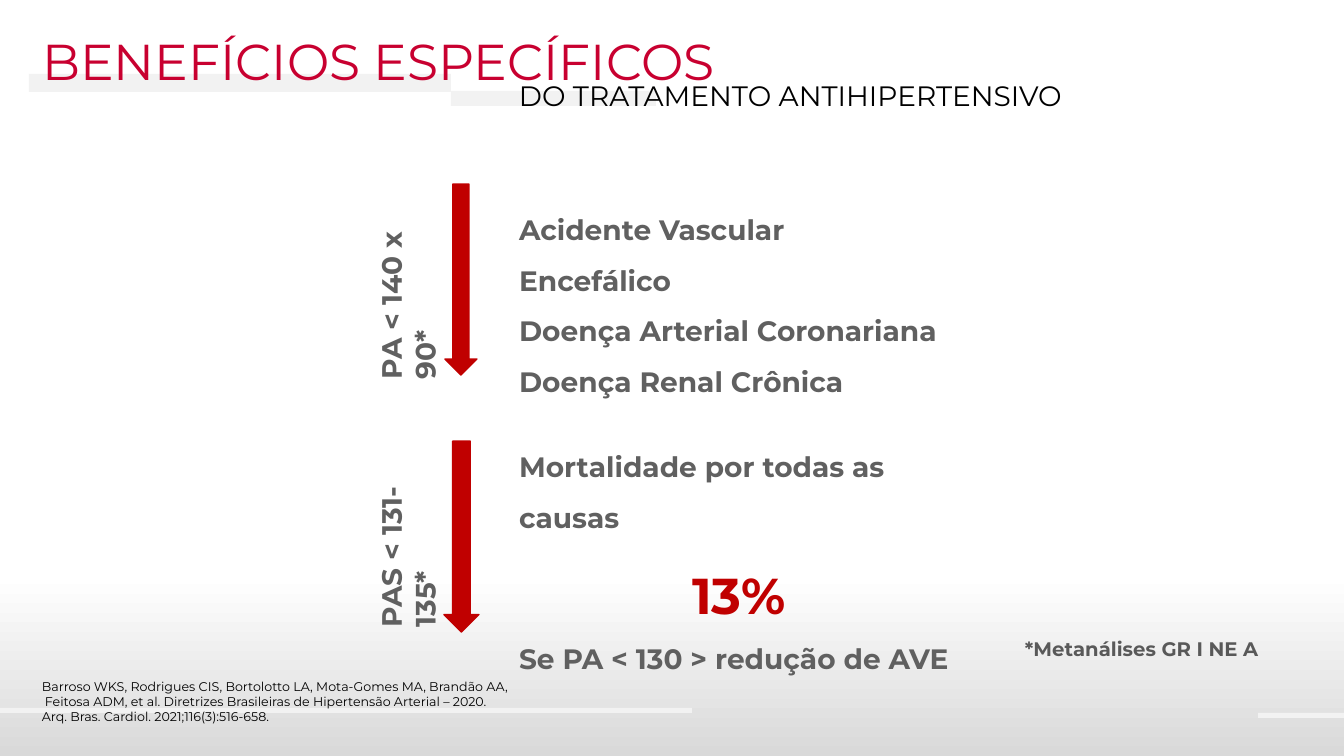
"""Build the slide on the specific benefits of antihypertensive treatment."""
from lxml.etree import SubElement
from pptx import Presentation
from pptx.dml.color import RGBColor
from pptx.enum.shapes import MSO_SHAPE as SHAPE
from pptx.enum.text import MSO_ANCHOR, MSO_AUTO_SIZE, PP_ALIGN
from pptx.oxml.ns import qn
from pptx.util import Emu, Pt

PX = 914400 / 100.8
W, H = 1344, 756

THEME = {
    "font": "Montserrat",
    "bar": "F2F2F2",
    "arrow": "C00000",
    "panel": [(0.76, "FFFFFF"), (1, "D9D9D9")],
    "styles": {
        "title": {"size": 36, "color": "C80030", "bold": False},
        "subtitle": {"size": 20, "color": "000000", "bold": False},
        "item": {"size": 20, "color": "606060", "bold": True},
        "figure": {"size": 36, "color": "C00000", "bold": True},
        "note": {"size": 14, "color": "595959", "bold": True},
        "source": {"size": 9, "color": "000000", "bold": False},
    },
}

BARS = [(29, 74, 422, 18), (451, 91, 205, 15), (0, 708, 692, 5), (1258, 713, 86, 5)]
ARROWS = [(445, 184, 32, 191), (444, 441, 35, 191)]

PLACEHOLDERS = {
    0: {"box": (32, 25, 1048, 72), "spacing": 1,
        "lines": [("BENEFÍCIOS ESPECÍFICOS", "title", 0)]},
    1: {"box": (509, 191, 440, 162), "spacing": 1.5,
        "lines": [("Acidente Vascular Encefálico", "item", 0),
                  ("Doença Arterial Coronariana", "item", 0),
                  ("Doença Renal Crônica", "item", 0)]},
    2: {"box": (509, 428, 487, 204), "spacing": 1.5,
        "lines": [("Mortalidade por todas as causas", "item", 0),
                  ("13%", "figure", 173),
                  ("Se PA < 130 > redução de AVE", "item", 0)]},
}

TEXTS = [
    {"box": (509, 74, 729, 44),
     "lines": [("DO TRATAMENTO ANTIHIPERTENSIVO", "subtitle", 0)]},
    {"box": (281, 257, 220, 44), "rotation": 270,
     "lines": [("PA < 140 x 90*", "item", 0)]},
    {"box": (285, 509, 212, 44), "rotation": 270,
     "lines": [("PAS < 131-135*", "item", 0)]},
    {"box": (1015, 632, 266, 34),
     "lines": [("*Metanálises GR I NE A", "note", 0)]},
    {"box": (32, 674, 674, 56),
     "lines": [("Barroso WKS, Rodrigues CIS, Bortolotto LA, Mota-Gomes MA, Brandão AA,", "source", 0),
               ("Feitosa ADM, et al. Diretrizes Brasileiras de Hipertensão Arterial – 2020.", "source", 3),
               ("Arq. Bras. Cardiol. 2021;116(3):516-658.", "source", 0)]},
]


def px(n):
    return Emu(round(n * PX))


def rgb(color):
    return RGBColor.from_string(color)


def set_all(obj, values):
    for name, value in values.items():
        setattr(obj, name, value)


def place(sp, box):
    set_all(sp, dict(zip(("left", "top", "width", "height"), map(px, box))))


def add_shape(s, kind, box, color=None, outlined=False):
    sp = s.shapes.add_shape(kind, *map(px, box))
    sp.shadow.inherit = False
    if color:
        sp.fill.solid()
        sp.fill.fore_color.rgb = rgb(color)
    if outlined:
        sp.line.color.rgb = rgb(color)
        sp.line.width = Pt(1)
    else:
        sp.line.fill.background()
    return sp


def add_panel(s):
    fill = add_shape(s, SHAPE.RECTANGLE, (0, 0, W, H)).fill
    fill.gradient()
    fill.gradient_angle = 270
    for stop, (position, color) in zip(fill.gradient_stops, THEME["panel"]):
        stop.position = position
        stop.color.rgb = rgb(color)


def write(sp, lines, spacing=1):
    tf = sp.text_frame
    set_all(tf, {"word_wrap": True, "auto_size": MSO_AUTO_SIZE.NONE,
                 "vertical_anchor": MSO_ANCHOR.TOP})
    for i, (text, style, indent) in enumerate(lines):
        p = tf.add_paragraph() if i else tf.paragraphs[0]
        set_all(p, {"alignment": PP_ALIGN.LEFT, "line_spacing": spacing,
                    "space_before": Pt(0)})
        pPr = p._p.get_or_add_pPr()
        pPr.set("marL", str(px(indent)))
        pPr.set("indent", "0")
        SubElement(pPr, qn("a:buNone"))
        r = p.add_run()
        r.text = text
        look = THEME["styles"][style]
        set_all(r.font, {"name": THEME["font"], "size": Pt(look["size"]),
                         "bold": look["bold"]})
        r.font.color.rgb = rgb(look["color"])


def main():
    prs = Presentation()
    prs.slide_width, prs.slide_height = px(W), px(H)
    s = prs.slides.add_slide(prs.slide_layouts[3])
    add_panel(s)
    for box in BARS:
        add_shape(s, SHAPE.RECTANGLE, box, THEME["bar"])
    for idx, part in PLACEHOLDERS.items():
        sp = s.placeholders[idx]
        place(sp, part["box"])
        write(sp, part["lines"], part["spacing"])
        s.shapes._spTree.append(sp._element)
    for box in ARROWS:
        add_shape(s, SHAPE.DOWN_ARROW, box, THEME["arrow"], outlined=True)
    for part in TEXTS:
        sp = s.shapes.add_textbox(*map(px, part["box"]))
        sp.rotation = part.get("rotation", 0)
        write(sp, part["lines"])
    prs.save("out.pptx")


if __name__ == "__main__":
    main()
